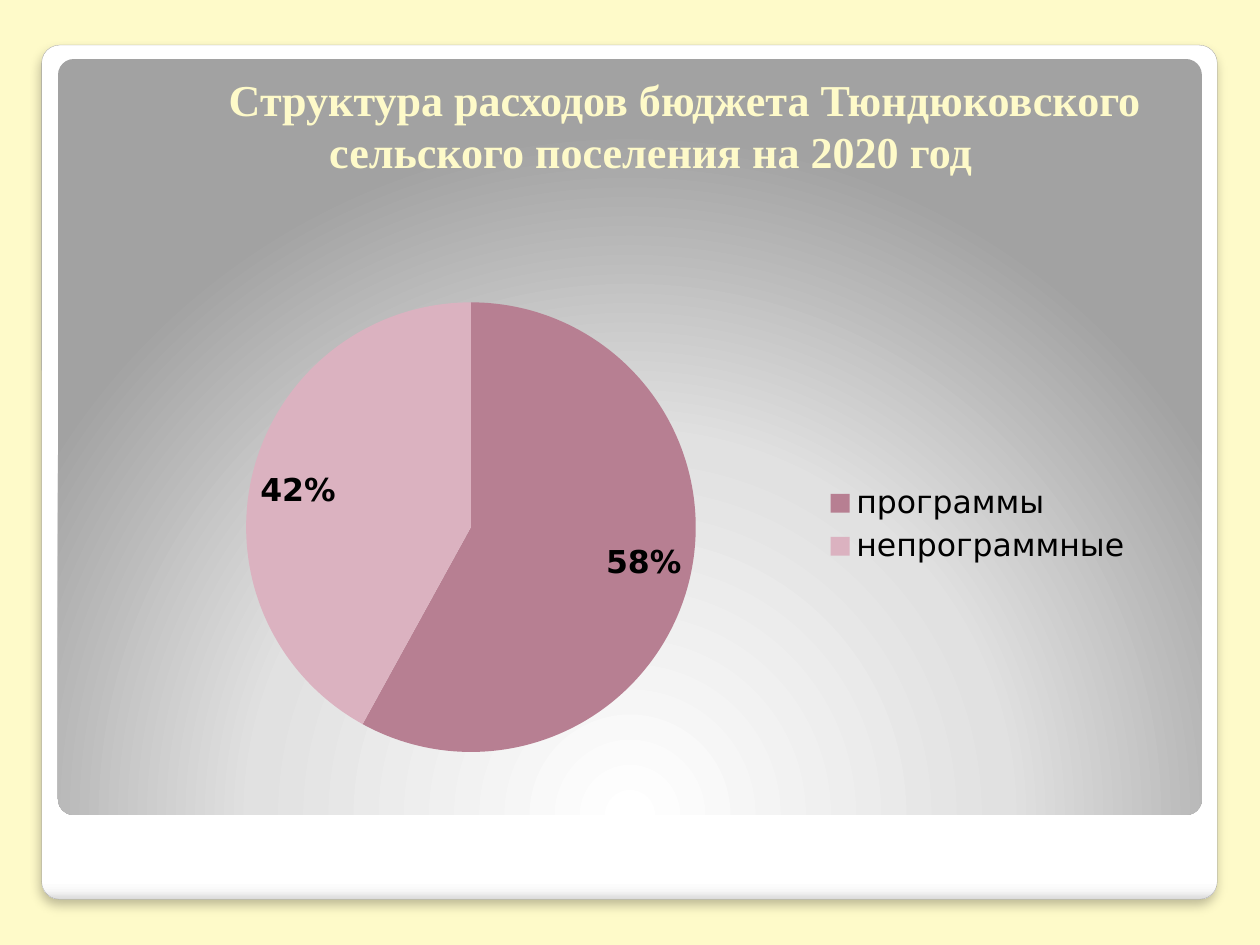
from pptx import Presentation
from pptx.chart.data import CategoryChartData
from pptx.dml.color import RGBColor
from pptx.enum.chart import XL_CHART_TYPE as ChartType, XL_LABEL_POSITION as LabelPos, XL_LEGEND_POSITION as LegendPos
from pptx.enum.shapes import MSO_SHAPE as Shape
from pptx.enum.text import MSO_ANCHOR as Anchor, PP_ALIGN as Align
from pptx.oxml import parse_xml
from pptx.util import Cm, Pt

# Content
TITLE = "Структура расходов бюджета Тюндюковского сельского поселения на 2020 год"
SHARES = [("программы", 0.58, "dark"), ("непрограммные", 0.42, "light")]
COLORS = {"page": "FEFAC9", "title": "FEFAC9", "edge": "A4A4A4", "text": "000000",
          "dark": "B77F92", "light": "DBB2C0"}

# Places in cm: left, top, width, height
FRAME = (0.84, 0.91, 23.7, 17.22)
PANEL = (1.17, 1.19, 23.06, 15.24)
TITLE_BOX = (2.11, 1.12, 22.02, 2.59)
CHART_BOX = (2.49, 5.64, 20.6, 9.88)
PIE = {"x": 0.12, "y": 0.04, "w": 0.44, "h": 0.93}  # shares of the chart box

# Gradients: stops in percent, then direction
FRAME_STOPS = [(0, "FFFFFF"), (98, "FFFFFF"), (99, "F7F7F7"), (100, "DADADA")]
PANEL_STOPS = [(0, "FFFFFF"), (55, "E1E1E1"), (100, "A2A2A2")]
DOWNWARD = '<a:lin ang="5400000" scaled="0"/>'
FROM_BOTTOM = ('<a:path path="circle"><a:fillToRect l="50000" t="175000" '
               'r="50000" b="-75000"/></a:path>')
NS_A = 'xmlns:a="http://schemas.openxmlformats.org/drawingml/2006/main"'
NS_C = 'xmlns:c="http://schemas.openxmlformats.org/drawingml/2006/chart"'


def rgb(name):
    return RGBColor.from_string(COLORS[name])


def add_card(s, box, stops, direction):
    sp = s.shapes.add_shape(Shape.ROUNDED_RECTANGLE, *map(Cm, box))
    sp.adjustments[0] = 0.021
    sp.shadow.inherit = False
    sp.line.fill.background()
    gs = "".join(f'<a:gs pos="{pos * 1000}"><a:srgbClr val="{color}"/></a:gs>'
                 for pos, color in stops)
    grad = parse_xml(f'<a:gradFill {NS_A} rotWithShape="1"><a:gsLst>{gs}</a:gsLst>'
                     f'{direction}</a:gradFill>')
    sp._element.spPr.find(".//{*}prstGeom").addnext(grad)
    return sp


prs = Presentation()
prs.slide_width, prs.slide_height = Cm(25.4), Cm(19.05)
s = prs.slides.add_slide(prs.slide_layouts[6])
s.background.fill.solid()
s.background.fill.fore_color.rgb = rgb("page")

# White frame with a soft shadow, grey panel on it
frame = add_card(s, FRAME, FRAME_STOPS, DOWNWARD)
frame.line.color.rgb = rgb("edge")
frame.line.width = Pt(0.16)
frame._element.spPr.find("{*}effectLst").append(parse_xml(
    f'<a:outerShdw {NS_A} blurRad="{Pt(6)}" dist="{Pt(4)}" dir="5400000" algn="t" '
    'rotWithShape="0"><a:srgbClr val="000000"><a:alpha val="25000"/></a:srgbClr></a:outerShdw>'))
add_card(s, PANEL, PANEL_STOPS, FROM_BOTTOM)

# Title with an indented first line
tf = s.shapes.add_textbox(*map(Cm, TITLE_BOX)).text_frame
tf.word_wrap = True
tf.vertical_anchor = Anchor.BOTTOM
p = tf.paragraphs[0]
p.text = TITLE
p.alignment = Align.CENTER
p.font.name, p.font.size, p.font.bold = "Times New Roman", Pt(25.2), True
p.font.color.rgb = rgb("title")
p._p.get_or_add_pPr().set("indent", str(Cm(1.37)))

# Pie chart
data = CategoryChartData(number_format="0%")
data.categories = [name for name, _, _ in SHARES]
data.add_series("Расходы", [share for _, share, _ in SHARES])
chart = s.shapes.add_chart(ChartType.PIE, *map(Cm, CHART_BOX), data).chart
chart.has_title = False
chart.font.name, chart.font.size = "DejaVu Sans", Pt(18)
chart.font.color.rgb = rgb("text")
chart.has_legend = True
chart.legend.position = LegendPos.RIGHT
chart.legend.include_in_layout = False

plot = chart.plots[0]
plot.vary_by_categories = True
for i, (_, _, color) in enumerate(SHARES):
    fill = plot.series[0].points[i].format.fill
    fill.solid()
    fill.fore_color.rgb = rgb(color)

plot.has_data_labels = True
labels = plot.data_labels
labels.show_value = True
labels.show_percentage = False
labels.number_format, labels.number_format_is_linked = "0%", False
labels.position = LabelPos.INSIDE_END
labels.font.bold, labels.font.size = True, Pt(18)

# Fixed place of the pie inside the chart
area = chart._chartSpace.chart.plotArea
for old in area.findall("{*}layout"):
    area.remove(old)
sizes = "".join(f'<c:{key} val="{value}"/>' for key, value in PIE.items())
area.insert(0, parse_xml(
    f'<c:layout {NS_C}><c:manualLayout><c:layoutTarget val="inner"/><c:xMode val="edge"/>'
    f'<c:yMode val="edge"/>{sizes}</c:manualLayout></c:layout>'))

prs.save("out.pptx")
